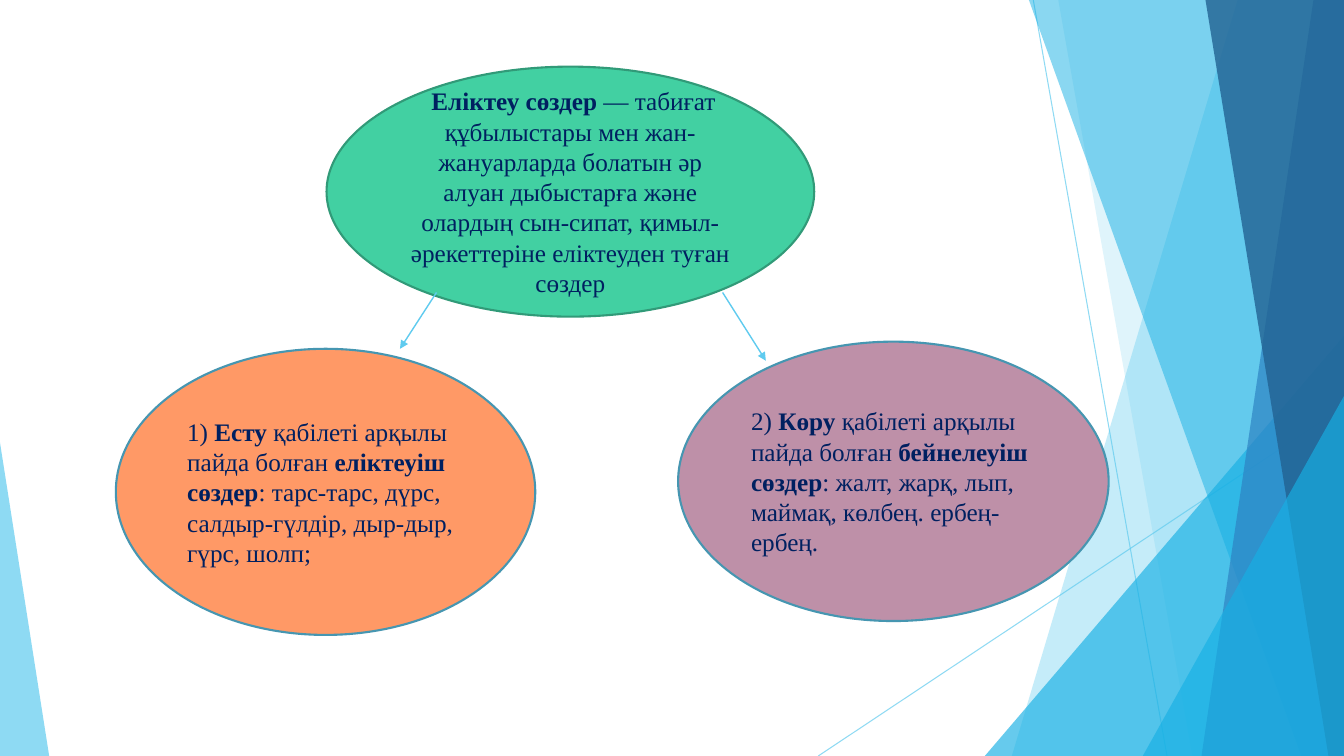
from dataclasses import dataclass

import lxml.etree
import pptx
import pptx.dml.color
import pptx.enum.shapes
import pptx.enum.text
import pptx.oxml.ns
import pptx.util

Cm = pptx.util.Cm
Pt = pptx.util.Pt
SHAPE = pptx.enum.shapes.MSO_SHAPE
ALIGN = pptx.enum.text.PP_ALIGN
qn = pptx.oxml.ns.qn
WIDTH, HEIGHT = 33.87, 19.05
SKY, AQUA = "5FCBEF", "17B0E4"
FONT = {"name": "Times New Roman", "size": Pt(18)}
FRAME = {"word_wrap": True, "vertical_anchor": pptx.enum.text.MSO_ANCHOR.MIDDLE}


@dataclass
class Line:
    start: tuple[float, float]
    end: tuple[float, float]
    width: float
    opacity: int = 100
    arrow: bool = False


@dataclass
class Facet:
    top: float
    bottom: float
    color: str
    opacity: int


@dataclass
class Triangle:
    left: float
    top: float
    width: float
    apex: float
    color: str
    opacity: int


@dataclass
class Oval:
    box: tuple[float, float, float, float]
    fill: str
    border: str
    align: ALIGN
    runs: list[tuple[str, bool]]


BACKDROP = [
    Line((26.04, 0), (29.41, HEIGHT), 0.75, 70),
    Line((WIDTH, 10.24), (20.62, HEIGHT), 0.75, 70),
    Facet(31.19, 25.5, SKY, 36),
    Facet(26.67, 30.05, SKY, 20),
    Triangle(24.82, 8.46, 9.05, 1, AQUA, 66),
    Facet(25.93, 32.79, AQUA, 50),
    Facet(33.1, 30.28, "2E83C3", 70),
    Facet(30.38, 33.48, "226292", 80),
    Triangle(28.8, 9.98, 5.07, 1, AQUA, 66),
    Triangle(0, 11.15, 1.24, 0, SKY, 70),
]

OVALS = [
    Oval((8.23, 1.68, 12.29, 6.3), "42D0A2", "319A78", ALIGN.CENTER, [
        (" Еліктеу сөздер", True),
        (" — табиғат құбылыстары мен жан-жануарларда болатын әр алуан "
         "дыбыстарға және олардың сын-сипат, қимыл-әрекеттеріне "
         "еліктеуден туған сөздер", False),
    ]),
    Oval((2.92, 8.79, 10.57, 7.21), "FF9966", "4696B1", ALIGN.LEFT, [
        ("1) ", False),
        ("Есту ", True),
        ("қабілеті арқылы пайда болған ", False),
        ("еліктеуіш сөздер", True),
        (": тарс-тарс, дүрс, салдыр-гүлдір, дыр-дыр, гүрс, шолп;", False),
    ]),
    Oval((17.09, 8.61, 10.85, 7.04), "BE90A8", "4696B1", ALIGN.LEFT, [
        ("2) ", False),
        ("Көру ", True),
        ("қабілеті арқылы пайда болған ", False),
        ("бейнелеуіш сөздер", True),
        (": жалт, жарқ, лып, маймақ, көлбең. ербең-ербең.", False),
    ]),
]

ARROWS = [
    Line((11, 7.37), (10.08, 8.79), 1, arrow=True),
    Line((18.21, 7.37), (19.3, 9.09), 1, arrow=True),
]


def rgb(color: str) -> pptx.dml.color.RGBColor:
    return pptx.dml.color.RGBColor.from_string(color)


def set_all(target, values: dict) -> None:
    for name, value in values.items():
        setattr(target, name, value)


def set_opacity(sp, percent: int) -> None:
    for clr in sp._element.spPr.iter(qn("a:srgbClr")):
        lxml.etree.SubElement(clr, qn("a:alpha"), val=str(percent * 1000))


def paint(sp, color: str) -> None:
    sp.shadow.inherit = False
    sp.fill.solid()
    sp.fill.fore_color.rgb = rgb(color)


def draw_line(shapes, line: Line) -> None:
    points = [Cm(v) for v in line.start + line.end]
    cxn = shapes.add_connector(pptx.enum.shapes.MSO_CONNECTOR.STRAIGHT, *points)
    cxn.line.width = Pt(line.width)
    cxn.line.color.rgb = rgb(SKY)
    props = cxn._element.spPr
    if line.opacity < 100:
        set_opacity(cxn, line.opacity)
    if line.arrow:
        lxml.etree.SubElement(props.find(qn("a:ln")), qn("a:tailEnd"), type="triangle")
    lxml.etree.SubElement(props, qn("a:effectLst"))


def draw_facet(shapes, facet: Facet) -> None:
    builder = shapes.build_freeform(Cm(facet.top), 0)
    corners = [(WIDTH, 0), (WIDTH, HEIGHT), (facet.bottom, HEIGHT)]
    builder.add_line_segments([(Cm(x), Cm(y)) for x, y in corners])
    sp = builder.convert_to_shape()
    paint(sp, facet.color)
    sp.line.fill.background()
    set_opacity(sp, facet.opacity)


def draw_triangle(shapes, tri: Triangle) -> None:
    box = (tri.left, tri.top, tri.width, HEIGHT - tri.top)
    sp = shapes.add_shape(SHAPE.ISOSCELES_TRIANGLE, *[Cm(v) for v in box])
    sp.adjustments[0] = tri.apex
    paint(sp, tri.color)
    sp.line.fill.background()
    set_opacity(sp, tri.opacity)


def draw_oval(shapes, oval: Oval) -> None:
    sp = shapes.add_shape(SHAPE.OVAL, *[Cm(v) for v in oval.box])
    paint(sp, oval.fill)
    sp.line.color.rgb = rgb(oval.border)
    sp.line.width = Pt(1.5)
    tf = sp.text_frame
    set_all(tf, FRAME)
    p = tf.paragraphs[0]
    p.alignment = oval.align
    for text, bold in oval.runs:
        r = p.add_run()
        r.text = text
        set_all(r.font, FONT | {"bold": bold})
        r.font.color.rgb = rgb("002060")


DRAW = {Line: draw_line, Facet: draw_facet, Triangle: draw_triangle, Oval: draw_oval}


def main() -> None:
    prs = pptx.Presentation()
    set_all(prs, {"slide_width": Cm(WIDTH), "slide_height": Cm(HEIGHT)})
    s = prs.slides.add_slide(prs.slide_layouts[6])
    for item in BACKDROP + OVALS + ARROWS:
        DRAW[type(item)](s.shapes, item)
    prs.save("out.pptx")


if __name__ == "__main__":
    main()
